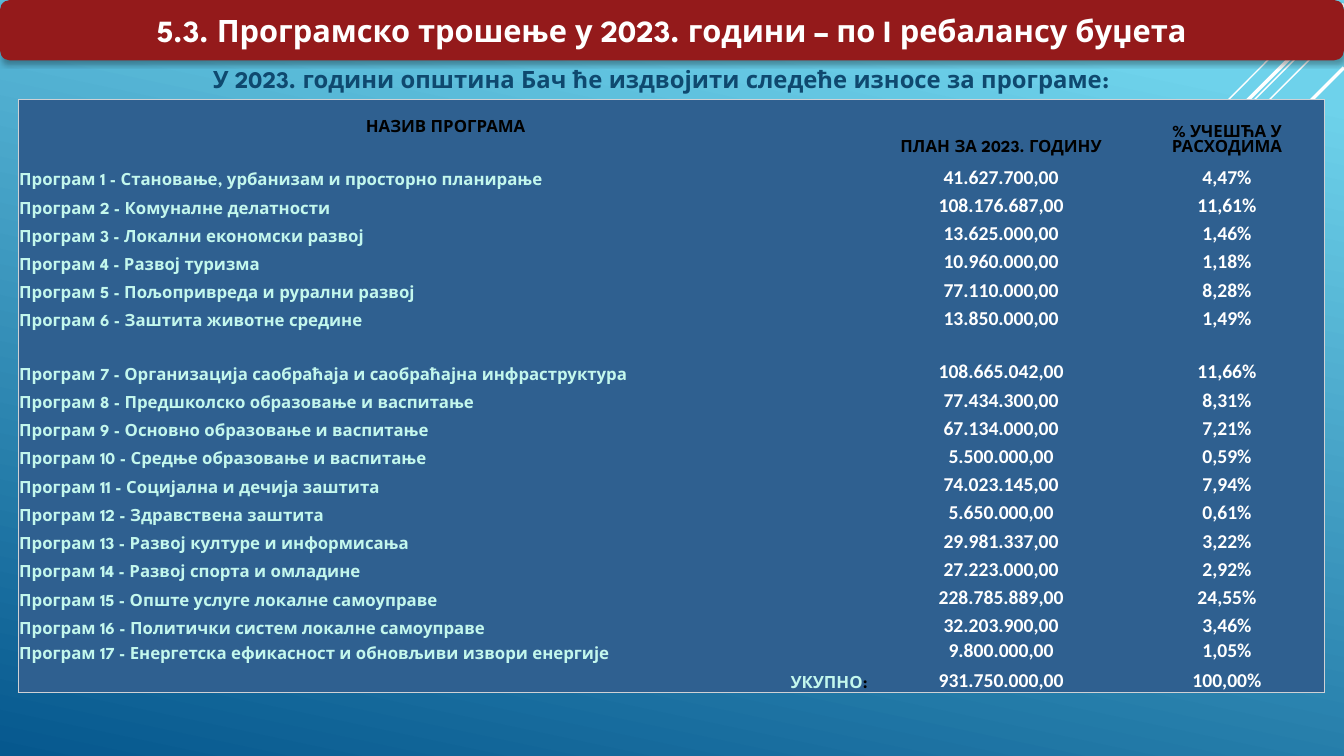
from lxml import etree
from pptx import Presentation
from pptx.dml.color import RGBColor
from pptx.enum.shapes import MSO_CONNECTOR as CONN, MSO_SHAPE as SHAPE
from pptx.enum.text import MSO_ANCHOR as ANCHOR, PP_ALIGN as ALIGN
from pptx.oxml import parse_xml
from pptx.oxml.ns import nsdecls, qn
from pptx.util import Emu, Pt

SCALE = 9144
HEADING = "League Spartan"
BORDER = "CFD1D5"
NO_GRID = "{2D5ABB26-0587-4C30-8999-92F81FD0307C}"
RAYS = [
    (1316, 1, 900, 418, 1),
    (1333, 10, 668, 675, 1),
    (1333, 25, 791, 567, 1),
    (1333, 4, 802, 534, 2.5),
    (1333, 67, 858, 542, 2.5),
]
HEADERS = ["НАЗИВ ПРОГРАМА", "ПЛАН ЗА 2023. ГОДИНУ", "% УЧЕШЋА У РАСХОДИМА"]
PROGRAMS = [
    ("Становање, урбанизам и просторно планирање", "41.627.700,00", "4,47%"),
    ("Комуналне делатности", "108.176.687,00", "11,61%"),
    ("Локални економски развој", "13.625.000,00", "1,46%"),
    ("Развој туризма", "10.960.000,00", "1,18%"),
    ("Пољопривреда и рурални развој", "77.110.000,00", "8,28%"),
    ("Заштита животне средине", "13.850.000,00", "1,49%"),
    ("Организација саобраћаја и саобраћајна инфраструктура", "108.665.042,00", "11,66%"),
    ("Предшколско образовање и васпитање", "77.434.300,00", "8,31%"),
    ("Основно образовање и васпитање", "67.134.000,00", "7,21%"),
    ("Средње образовање и васпитање", "5.500.000,00", "0,59%"),
    ("Социјална и дечија заштита", "74.023.145,00", "7,94%"),
    ("Здравствена заштита", "5.650.000,00", "0,61%"),
    ("Развој културе и информисања", "29.981.337,00", "3,22%"),
    ("Развој спорта и омладине", "27.223.000,00", "2,92%"),
    ("Опште услуге локалне самоуправе", "228.785.889,00", "24,55%"),
    ("Политички систем локалне самоуправе", "32.203.900,00", "3,46%"),
    ("Енергетска ефикасност и обновљиви извори енергије", "9.800.000,00", "1,05%"),
]
TOTAL = ("931.750.000,00", "100,00%")
COLUMNS = [848, 254, 194]
ROWS = [56, 33] + [28] * 5 + [53] + [28] * 9 + [25, 29]


def px(*lengths):
    """Turn pixel lengths into EMU."""
    return [Emu(n * SCALE) for n in lengths]


def rgb(value):
    """Turn a hex string into a colour."""
    return RGBColor.from_string(value)


def apply(target, **values):
    """Set attributes from a dict of format values."""
    for name, value in values.items():
        setattr(target, name, value)


def write(tf, runs, size, font=HEADING, **paragraph):
    """Fill the first paragraph with bold (text, colour) runs."""
    p = tf.paragraphs[0]
    apply(p, **paragraph)
    for text, color in runs:
        r = p.add_run()
        apply(r, text=text)
        apply(r.font, name=font, size=Pt(size), bold=True)
        r.font.color.rgb = rgb(color)


def add_background(s):
    """Paint the blue gradient and the white diagonal rays."""
    fill = s.background.fill
    fill.gradient()
    fill.gradient_angle = 258
    for stop, (position, color) in zip(fill.gradient_stops, [(0.1, "6ED2EB"), (1, "06588E")]):
        stop.position = position
        stop.color.rgb = rgb(color)
    for x1, y1, x2, y2, width in RAYS:
        ray = s.shapes.add_connector(CONN.STRAIGHT, *px(x1, y1, x2, y2))
        ray.line.color.rgb = rgb("FFFFFF")
        ray.line.width = Pt(width)
        etree.SubElement(ray._element.spPr, qn("a:effectLst"))


def add_title(s, box):
    """Add the red title bar with its soft shadow."""
    bar = s.shapes.add_shape(SHAPE.ROUNDED_RECTANGLE, *px(*box))
    bar.fill.solid()
    bar.fill.fore_color.rgb = rgb("941A1B")
    bar.line.fill.background()
    bar._element.spPr.append(parse_xml(
        f'<a:effectLst {nsdecls("a")}><a:outerShdw blurRad="44450" dist="27940" dir="5400000"'
        ' algn="ctr" rotWithShape="0"><a:srgbClr val="000000"><a:alpha val="32000"/>'
        '</a:srgbClr></a:outerShdw></a:effectLst>'))
    apply(bar.text_frame, word_wrap=True, vertical_anchor=ANCHOR.MIDDLE)
    title = "5.3. Програмско трошење у 2023. години – по I ребалансу буџета"
    write(bar.text_frame, [(title, "FFFFFF")], 22, alignment=ALIGN.CENTER)


def add_subtitle(s, box):
    """Add the centred line above the table."""
    tf = s.shapes.add_textbox(*px(*box)).text_frame
    tf.word_wrap = True
    text = "У 2023. години општина Бач ће издвојити следеће износе за програме:"
    write(tf, [(text, "0F496F")], 17, alignment=ALIGN.CENTER, space_after=Pt(6))


def style_cell(cell, sides):
    """Set margins, the borders on the given sides and the fill."""
    left, bottom = px(1, 0)
    apply(cell, margin_left=left, margin_right=left, margin_top=left,
          margin_bottom=bottom, vertical_anchor=ANCHOR.BOTTOM)
    tcPr = cell._tc.get_or_add_tcPr()
    for side in sides:
        tcPr.append(parse_xml(
            f'<a:ln{side} {nsdecls("a")} w="9525"><a:solidFill><a:srgbClr val="{BORDER}">'
            f'<a:alpha val="60000"/></a:srgbClr></a:solidFill></a:ln{side}>'))
    cell.fill.solid()
    cell.fill.fore_color.rgb = rgb("2F6090")


def add_budget_table(s, left, top):
    """Add the table of programmes, plans and shares."""
    box = px(left, top, sum(COLUMNS), sum(ROWS))
    frame = s.shapes.add_table(len(ROWS), len(COLUMNS), *box)
    table = frame.table
    apply(table, first_row=False, horz_banding=False)
    frame._element.find(".//" + qn("a:tableStyleId")).text = NO_GRID
    for column, width in zip(table.columns, px(*COLUMNS)):
        column.width = width
    last_row, last_column = len(ROWS) - 1, len(COLUMNS) - 1
    for i, height in enumerate(px(*ROWS)):
        table.rows[i].height = height
        for j in range(len(COLUMNS)):
            edges = {"L": j == 0, "R": j == last_column, "T": i == 0, "B": i == last_row}
            style_cell(table.cell(i, j), [side for side, outer in edges.items() if outer])

    for j, text in enumerate(HEADERS):
        write(table.cell(0, j).text_frame, [(text, "000000")], 12, alignment=ALIGN.CENTER)
    table.cell(0, 0).vertical_anchor = ANCHOR.MIDDLE
    for i, (name, *_) in enumerate(PROGRAMS, 1):
        write(table.cell(i, 0).text_frame, [(f"Програм {i} - {name}", "C3F7ED")], 12)
    write(table.cell(last_row, 0).text_frame, [("УКУПНО", "C3F7ED"), (": ", "000000")], 12,
          alignment=ALIGN.RIGHT)
    for i, values in enumerate([row[1:] for row in PROGRAMS] + [TOTAL], 1):
        for j, value in enumerate(values, 1):
            write(table.cell(i, j).text_frame, [(value, "FFFFFF")], 14, "Calibri",
                  alignment=ALIGN.CENTER)


def main():
    """Build and save the slide."""
    prs = Presentation()
    prs.slide_width, prs.slide_height = px(1333, 750)
    s = prs.slides.add_slide(prs.slide_layouts[6])
    add_background(s)
    add_subtitle(s, (168, 59, 975, 55))
    add_title(s, (0, 0, 1333, 60))
    add_budget_table(s, 18, 99)
    prs.save("out.pptx")


if __name__ == "__main__":
    main()
